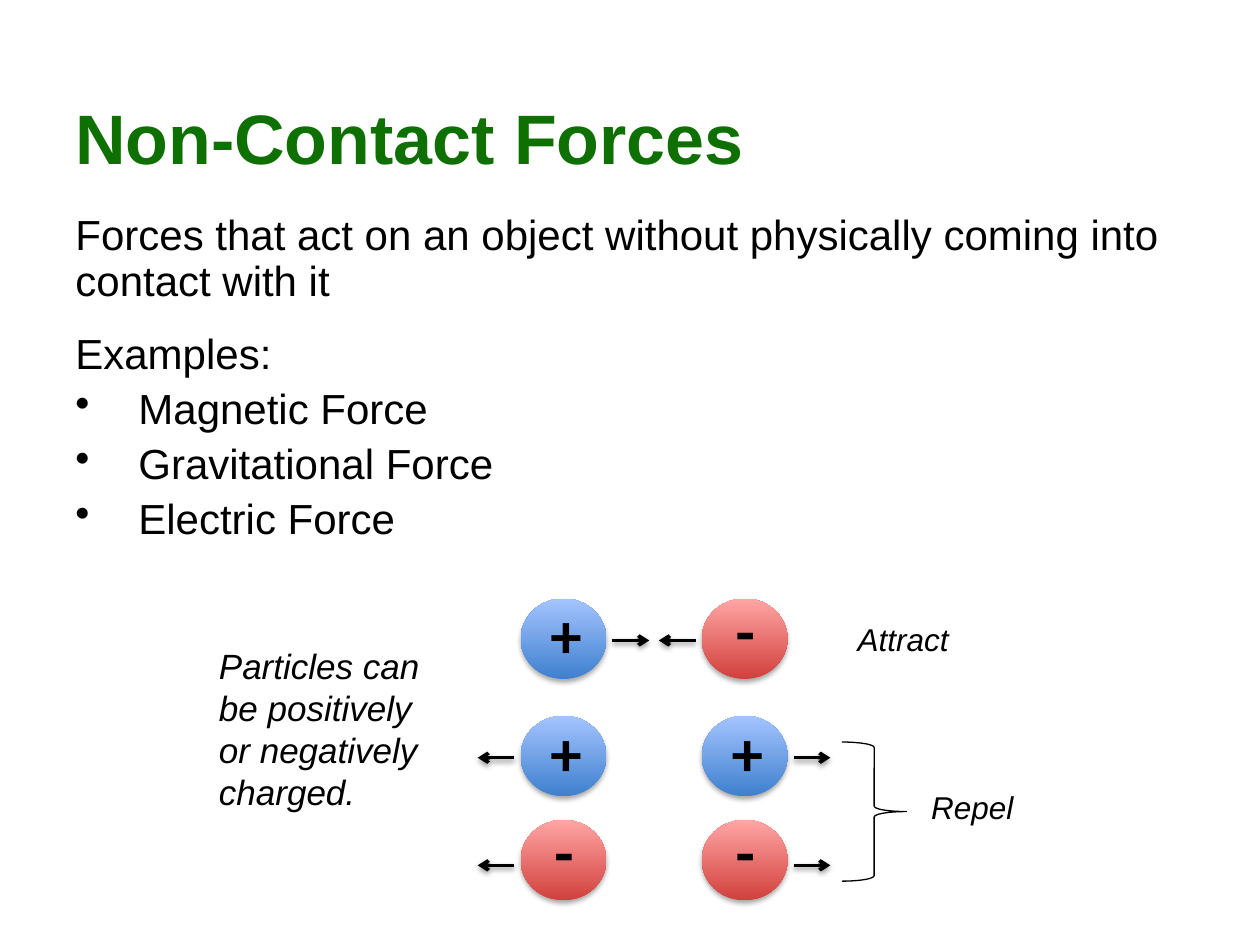
from lxml import etree
from pptx import Presentation
from pptx.dml.color import RGBColor
from pptx.enum.shapes import MSO_CONNECTOR, MSO_SHAPE
from pptx.enum.text import MSO_ANCHOR
from pptx.oxml import parse_xml
from pptx.oxml.ns import nsdecls, qn
from pptx.util import Pt

BLACK = RGBColor(0x00, 0x00, 0x00)
GREEN = RGBColor(0x0E, 0x70, 0x01)
BLUE_DARK = RGBColor(0x3F, 0x80, 0xCE)
BLUE_LIGHT = RGBColor(0xA4, 0xC4, 0xFF)
RED_DARK = RGBColor(0xD1, 0x40, 0x3C)
RED_LIGHT = RGBColor(0xFF, 0xA6, 0xA5)

# sign: gradient from bottom to top, offset of the sign inside the circle
CHARGES = {
    "+": ((BLUE_DARK, BLUE_LIGHT), (10, -5)),
    "-": ((RED_DARK, RED_LIGHT), (12.25, -7.5)),
}
COLUMNS = (297.5, 401)
CIRCLE_WIDTH, CIRCLE_HEIGHT = 49, 46
ARROW_LENGTH, ARROW_GAP = 21, 3.5


class ForcesSlide:
    font = "Arial"
    sign_font = "Calibri"

    def __init__(self, presentation):
        self.slide = presentation.slides.add_slide(presentation.slide_layouts[6])
        self.shapes = self.slide.shapes

    def style(self, paragraph, size, color=BLACK, name=None, bold=False, italic=False):
        font = paragraph.font
        font.name, font.size, font.color.rgb = name or self.font, Pt(size), color
        font.bold, font.italic = bold, italic

    def text(self, text, left, top, width, height, size, shapes=None,
             anchor=MSO_ANCHOR.TOP, **style):
        box = (shapes or self.shapes).add_textbox(Pt(left), Pt(top), Pt(width), Pt(height))
        frame = box.text_frame
        frame.word_wrap, frame.vertical_anchor = True, anchor
        frame.text = text
        for paragraph in frame.paragraphs:
            self.style(paragraph, size, **style)
        return frame

    def body(self, lines, left, top, width, height, size):
        """Write lines given as (text, space before, bulleted)."""
        frame = self.text("\n".join(line[0] for line in lines), left, top, width, height, size)
        for paragraph, (_, space, bulleted) in zip(frame.paragraphs, lines):
            paragraph.line_spacing = 0.9
            paragraph.space_before = Pt(space)
            if bulleted:
                properties = paragraph._p.get_or_add_pPr()
                properties.set("marL", str(Pt(36)))
                properties.set("indent", str(Pt(-36)))
                bullet = parse_xml(f'<a:buChar {nsdecls("a")} char="•"/>')
                properties.find(qn("a:defRPr")).addprevious(bullet)

    def shadow(self, shape, distance, opacity):
        """Replace the theme shadow by a soft one falling straight down."""
        properties = shape._element.spPr
        effects = properties.find(qn("a:effectLst"))
        if effects is None:
            effects = etree.SubElement(properties, qn("a:effectLst"))
        effects.append(parse_xml(
            f'<a:outerShdw {nsdecls("a")} blurRad="{Pt(3.1)}" dist="{Pt(distance)}" '
            f'dir="5400000" rotWithShape="0"><a:srgbClr val="000000">'
            f'<a:alpha val="{opacity * 1000}"/></a:srgbClr></a:outerShdw>'))

    def particle(self, sign, left, top):
        colors, (shift_x, shift_y) = CHARGES[sign]
        group = self.shapes.add_group_shape()
        circle = group.shapes.add_shape(
            MSO_SHAPE.OVAL, Pt(left), Pt(top), Pt(CIRCLE_WIDTH), Pt(CIRCLE_HEIGHT))
        circle.fill.gradient()
        circle.fill.gradient_angle = 90
        for stop, color in zip(circle.fill.gradient_stops, colors):
            stop.color.rgb = color
        circle.line.fill.background()
        circle.shadow.inherit = False
        self.shadow(circle, 1.8, 35)
        self.text(sign, left + shift_x, top + shift_y, 28, 51, 36,
                  shapes=group.shapes, name=self.sign_font, bold=True)

    def arrow(self, start, y, direction):
        connector = self.shapes.add_connector(
            MSO_CONNECTOR.STRAIGHT, Pt(start), Pt(y),
            Pt(start + direction * ARROW_LENGTH), Pt(y))
        connector.line.color.rgb = BLACK
        connector.line.width = Pt(2)
        connector.line._get_or_add_ln().append(
            parse_xml(f'<a:tailEnd {nsdecls("a")} type="arrow"/>'))
        self.shadow(connector, 1.6, 38)

    def pair(self, signs, top, arrow_y, attracts):
        for sign, left, outward in zip(signs, COLUMNS, (-1, 1)):
            self.particle(sign, left, top)
            direction = -outward if attracts else outward
            edge = left + CIRCLE_WIDTH if direction > 0 else left
            self.arrow(edge + direction * ARROW_GAP, arrow_y, direction)

    def brace(self, left, top, width, height):
        shape = self.shapes.add_shape(
            MSO_SHAPE.RIGHT_BRACE, Pt(left), Pt(top), Pt(width), Pt(height))
        shape.fill.background()
        shape.line.color.rgb = BLACK
        shape.line.width = Pt(0.75)
        shape.shadow.inherit = False


def main():
    presentation = Presentation()
    presentation.slide_width, presentation.slide_height = Pt(720), Pt(540)
    slide = ForcesSlide(presentation)

    slide.text("Non-Contact Forces", 36, 37, 649.5, 82, 40,
               anchor=MSO_ANCHOR.MIDDLE, color=GREEN, bold=True)
    slide.body([
        ("Forces that act on an object without physically coming into contact with it", 0, False),
        ("Examples:", 16, False),
        ("Magnetic Force", 5.5, True),
        ("Gravitational Force", 5.5, True),
        ("Electric Force", 5.5, True),
    ], 36, 119, 649.5, 216, 24)
    slide.text("Particles can be positively or negatively charged.",
               118, 364.5, 131, 104.5, 20, italic=True)

    for signs, top, arrow_y, attracts in (
            ("+-", 342, 366, True), ("++", 409, 433, False), ("--", 468.5, 494.5, False)):
        slide.pair(signs, top, arrow_y, attracts)

    slide.text("Attract", 483, 350.5, 76, 29, 18, italic=True)
    slide.brace(481, 424, 37, 79.5)
    slide.text("Repel", 525, 446.5, 76, 29, 18, italic=True)
    presentation.save("out.pptx")


if __name__ == "__main__":
    main()
